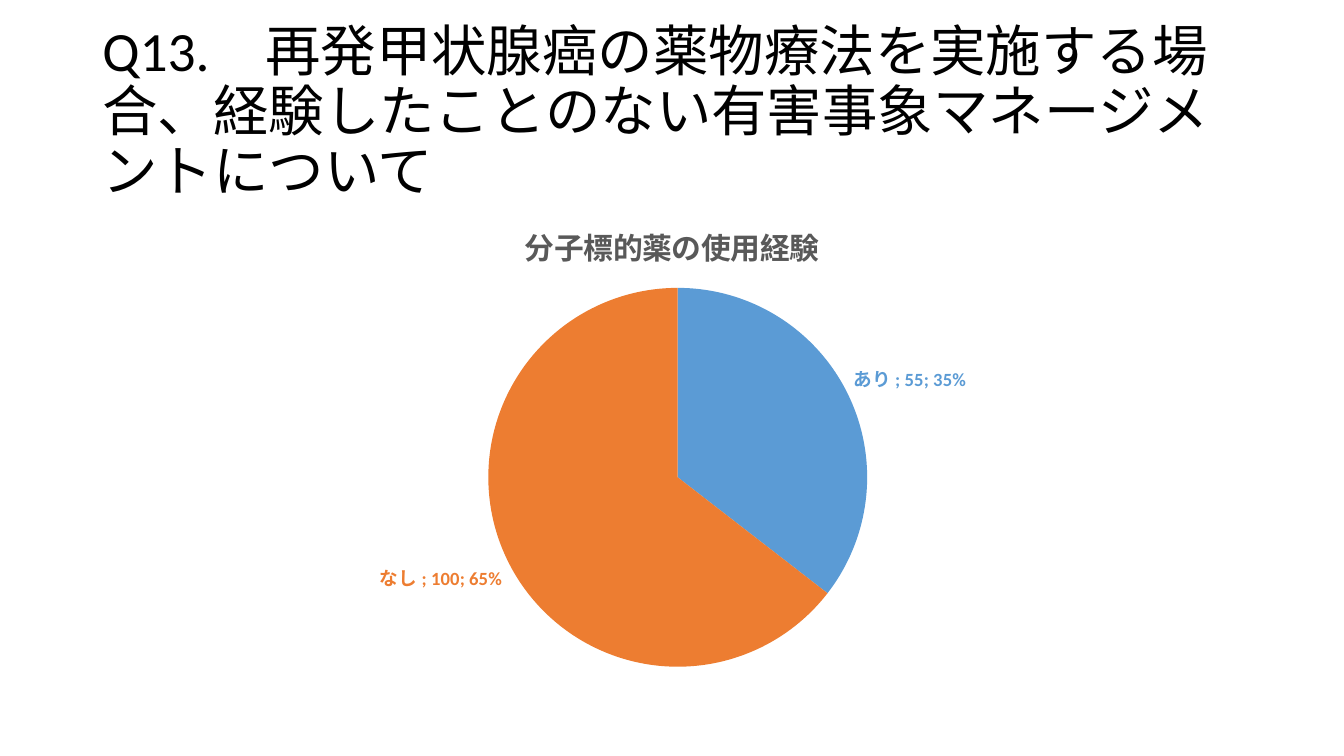
from dataclasses import dataclass

from lxml.etree import SubElement
from pptx import Presentation
from pptx.chart.data import CategoryChartData
from pptx.dml.color import RGBColor
from pptx.enum.chart import XL_CHART_TYPE as ChartType, XL_LABEL_POSITION as LabelPosition
from pptx.enum.text import MSO_ANCHOR as Anchor
from pptx.oxml import parse_xml
from pptx.oxml.ns import nsdecls, qn
from pptx.util import Pt


@dataclass(frozen=True)
class Theme:
    font: str = "Calibri"
    ink: str = "000000"
    muted: str = "595959"
    slices: tuple = ("5B9BD5", "ED7D31")
    heading: float = 39.6
    chart_title: float = 21.3
    label: float = 13.3


THEME = Theme()


def style_font(font, size, color, bold=False):
    font.name = THEME.font
    font.size = Pt(size)
    font.bold = bold
    font.color.rgb = RGBColor.from_string(color)


def write_text(frame, text, *, size, color, bold=False, line_spacing=None):
    para = frame.paragraphs[0]
    para.line_spacing = line_spacing
    span = para.add_run()
    span.text = text
    style_font(span.font, size, color, bold)


def add_heading(page, text, left, top, width, height):
    box = page.shapes.add_textbox(Pt(left), Pt(top), Pt(width), Pt(height))
    frame = box.text_frame
    frame.word_wrap = True
    frame.vertical_anchor = Anchor.MIDDLE
    write_text(frame, text, size=THEME.heading, color=THEME.ink, line_spacing=0.9)


def show_category_value_percent(element):
    for tag in ("c:showCatName", "c:showVal", "c:showPercent"):
        element.find(qn(tag)).set("val", "1")
    separator = SubElement(element, qn("c:separator"))
    separator.text = "; "
    element.find(qn("c:showPercent")).getparent().find(qn("c:showBubbleSize")).addnext(separator)


def label_slices(series):
    labels = series.data_labels
    labels.show_category_name = True
    labels.show_value = True
    labels.show_percentage = True
    labels.position = LabelPosition.OUTSIDE_END
    style_font(labels.font, THEME.label, THEME.ink, bold=True)
    for index, color in enumerate(THEME.slices):
        point = series.points[index]
        point.format.fill.solid()
        point.format.fill.fore_color.rgb = RGBColor.from_string(color)
        point.format.line.fill.background()
        label = point.data_label
        style_font(label.font, THEME.label, color, bold=True)
        label.position = LabelPosition.OUTSIDE_END
    for element in labels._element.findall(qn("c:dLbl")):
        show_category_value_percent(element)


def place_plot(chart, **fractions):
    area = chart._chartSpace.chart.plotArea
    for old in area.findall(qn("c:layout")):
        area.remove(old)
    sizes = "".join(f'<c:{key} val="{value}"/>' for key, value in fractions.items())
    area.insert(0, parse_xml(
        f'<c:layout {nsdecls("c")}><c:manualLayout><c:layoutTarget val="inner"/>'
        f'<c:xMode val="edge"/><c:yMode val="edge"/>{sizes}</c:manualLayout></c:layout>'))


def add_pie(page, title, counts, left, top, width, height):
    data = CategoryChartData()
    data.categories = list(counts)
    data.add_series(title, list(counts.values()))
    chart = page.shapes.add_chart(
        ChartType.PIE, Pt(left), Pt(top), Pt(width), Pt(height), data).chart
    style_font(chart.font, 10, THEME.ink)
    chart.has_legend = False
    chart.has_title = True
    chart.chart_title.include_in_layout = False
    write_text(chart.chart_title.text_frame, title,
               size=THEME.chart_title, color=THEME.muted, bold=True)
    chart.plots[0].vary_by_categories = True
    label_slices(chart.plots[0].series[0])
    place_plot(chart, x=0.34, y=0.18, w=0.33, h=0.79)


def main():
    deck = Presentation()
    deck.slide_width, deck.slide_height = Pt(960), Pt(540)
    page = deck.slides.add_slide(deck.slide_layouts[6])
    add_heading(page, "Q13.　再発甲状腺癌の薬物療法を実施する場合、"
                      "経験したことのない有害事象マネージメントについて", 66, 28.75, 828, 104.4)
    add_pie(page, "分子標的薬の使用経験", {"あり ": 55, "なし ": 100}, 66, 144, 828, 342.6)
    deck.save("out.pptx")


if __name__ == "__main__":
    main()
